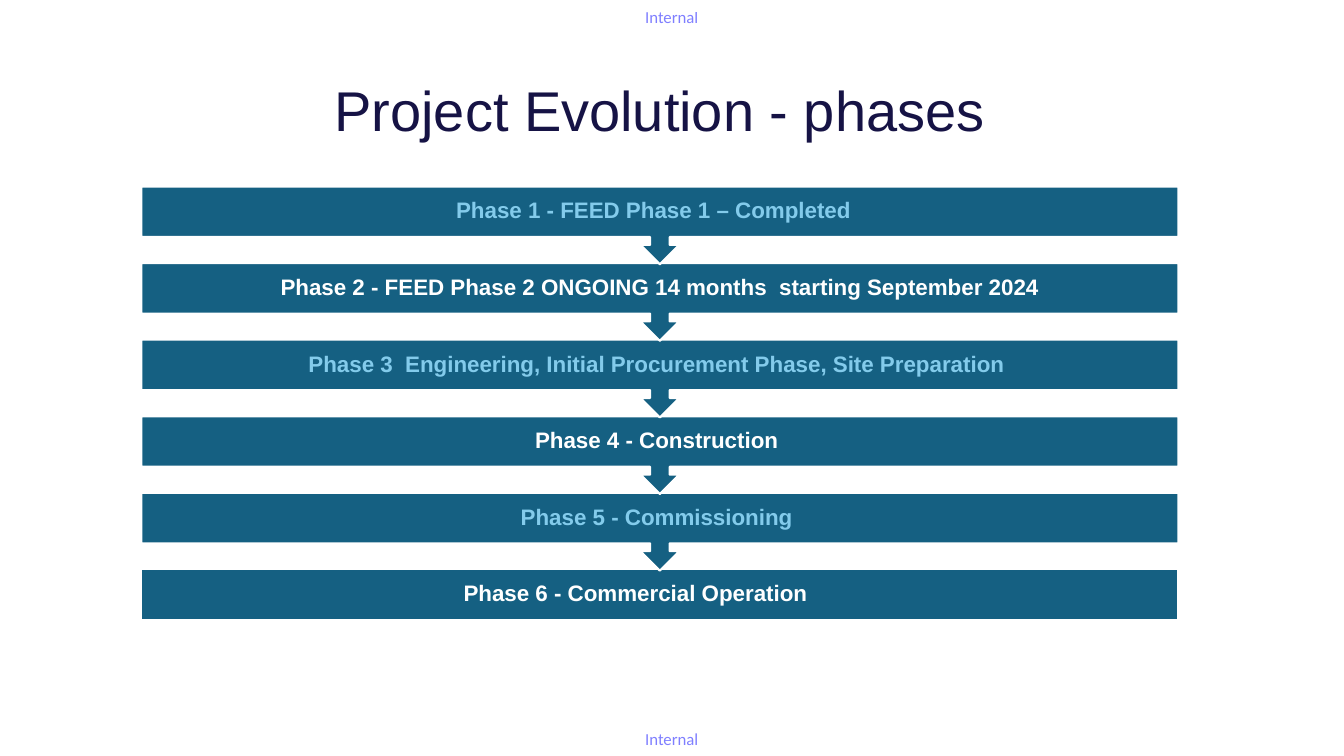
from lxml.etree import SubElement
from pptx import Presentation
from pptx.dml.color import RGBColor
from pptx.enum.shapes import MSO_SHAPE as Shape
from pptx.enum.text import MSO_ANCHOR as Anchor, PP_ALIGN as Align
from pptx.oxml.ns import qn
from pptx.util import Cm, Pt

NAVY = RGBColor(0x16, 0x13, 0x45)
TEAL = RGBColor(0x15, 0x60, 0x82)
SKY = RGBColor(0x83, 0xCB, 0xEB)
WHITE = RGBColor(0xFF, 0xFF, 0xFF)
BLUE = RGBColor(0x00, 0x00, 0xFF)

# Label and extra inset on the right, in cm
PHASES = [
    ("Phase 1 - FEED Phase 1 – Completed", 0.32),
    ("Phase 2 - FEED Phase 2 ONGOING 14 months  starting September 2024", 0),
    ("Phase 3  Engineering, Initial Procurement Phase, Site Preparation", 0.16),
    ("Phase 4 - Construction", 0.16),
    ("Phase 5 - Commissioning", 0.16),
    ("Phase 6 - Commercial Operation", 1.23),
]
PHASE_TOP, PHASE_PITCH = 4.7, 1.93
BAR_HEIGHT, CALLOUT_HEIGHT = 1.27, 1.96


class PhaseSlide:
    heading_font = "Arial"
    marking_font = "Calibri"

    def __init__(self, deck):
        self.slide = deck.slides.add_slide(deck.slide_layouts[6])

    def label(self, frame, text, size, font, color, bold=False, align=Align.LEFT, spacing=1.0):
        frame.vertical_anchor = Anchor.MIDDLE
        paragraph = frame.paragraphs[0]
        paragraph.alignment = align
        paragraph.line_spacing = spacing
        run = paragraph.add_run()
        run.text = text
        run.font.size = Pt(size)
        run.font.name = font
        run.font.bold = bold
        run.font.color.rgb = color
        return run

    def inset(self, frame, margin, extra_right=0):
        frame.margin_left = frame.margin_top = frame.margin_bottom = Cm(margin)
        frame.margin_right = Cm(margin + extra_right)

    def marking(self, text, top):
        box = self.slide.shapes.add_textbox(Cm(16.26), Cm(top), Cm(1.45), Cm(0.51))
        self.inset(box.text_frame, 0)
        box.text_frame.word_wrap = False
        run = self.label(box.text_frame, text, 12, self.marking_font, BLUE)
        # Half-transparent text
        fill = run._r.find(".//" + qn("a:srgbClr"))
        SubElement(fill, qn("a:alpha")).set("val", "50000")

    def title(self, text):
        box = self.slide.shapes.add_textbox(Cm(8.18), Cm(1.02), Cm(25.6), Cm(3.68))
        box.text_frame.word_wrap = True
        self.label(box.text_frame, text, 40, self.heading_font, NAVY, spacing=0.9)

    def phase(self, text, extra_right, top, color, last):
        kind = Shape.RECTANGLE if last else Shape.DOWN_ARROW_CALLOUT
        height = BAR_HEIGHT if last else CALLOUT_HEIGHT
        bar = self.slide.shapes.add_shape(kind, Cm(3.56), Cm(top), Cm(26.14), Cm(height))
        bar.shadow.inherit = False
        bar.fill.solid()
        bar.fill.fore_color.rgb = TEAL
        bar.line.color.rgb = WHITE
        bar.line.width = Pt(1.5)
        frame = bar.text_frame
        frame.word_wrap = True
        self.inset(frame, 0.3, extra_right)
        self.label(frame, text, 16, self.heading_font, color, True, Align.CENTER, 0.9)


def main():
    deck = Presentation()
    deck.slide_width, deck.slide_height = Cm(33.87), Cm(19.05)
    page = PhaseSlide(deck)

    # Classification markings
    for top in (0.18, 18.36):
        page.marking("Internal", top)

    page.title("Project Evolution - phases")

    # Phases, last one at the back so that each arrow lies over the next bar
    for index, (text, extra_right) in reversed(list(enumerate(PHASES))):
        page.phase(text, extra_right, PHASE_TOP + index * PHASE_PITCH,
                   WHITE if index % 2 else SKY, index == len(PHASES) - 1)

    deck.save("out.pptx")


if __name__ == "__main__":
    main()
